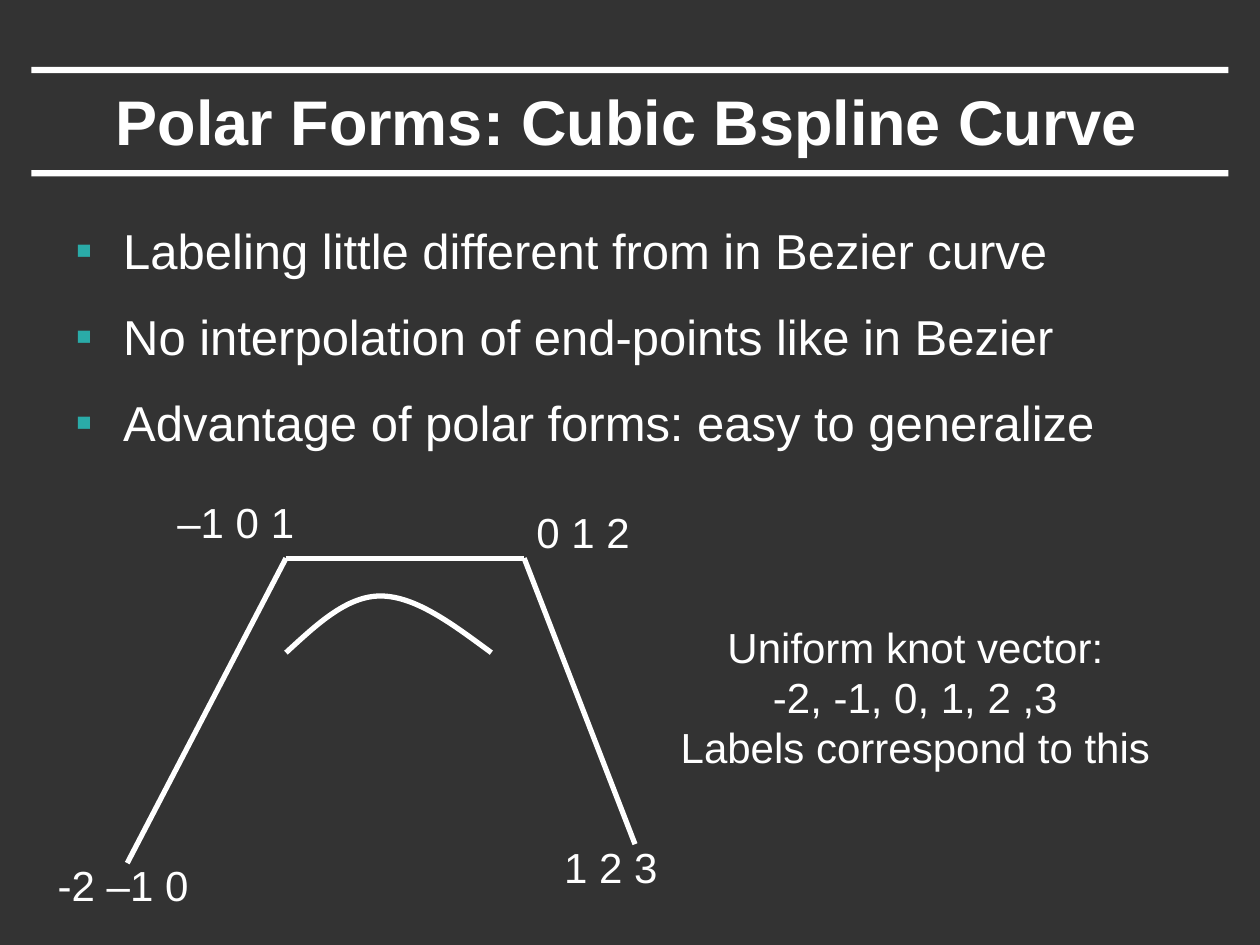
from lxml import etree
from pptx import Presentation
from pptx import util as u
from pptx.dml.color import RGBColor
from pptx.enum import shapes, text
from pptx.oxml.ns import qn

Inches = u.Inches
COLORS = {"back": "333333", "ink": "FFFFFF", "bullet": "2AABA8"}
INK = RGBColor.from_string(COLORS["ink"])


def write(shape, lines, size, align, bold=False):
    frame = shape.text_frame
    frame.text = "\n".join(lines)
    for para in frame.paragraphs:
        para.alignment = align
        for span in para.runs:
            span.font.name = "Arial"
            span.font.size = u.Pt(size)
            span.font.bold = bold
            span.font.color.rgb = INK
    return frame


def draw_line(shape):
    shape.line.color.rgb = INK
    shape.line.width = u.Pt(3)
    etree.SubElement(shape._element.spPr, qn("a:effectLst"))


deck = Presentation()
deck.slide_width, deck.slide_height = Inches(10), Inches(7.5)
page = deck.slides.add_slide(deck.slide_layouts[5])
page.background.fill.solid()
page.background.fill.fore_color.rgb = RGBColor.from_string(COLORS["back"])

for top in (0.53, 1.35):
    bar = page.shapes.add_shape(shapes.MSO_SHAPE.RECTANGLE, Inches(0.25), Inches(top), Inches(9.5), Inches(0.05))
    bar.shadow.inherit = False
    bar.fill.solid()
    bar.fill.fore_color.rgb = INK
    bar.line.fill.background()

title = page.shapes.title
title.left, title.top, title.width, title.height = Inches(0.74), Inches(0.58), Inches(8.47), Inches(0.75)
frame = write(title, ["Polar Forms: Cubic Bspline Curve"], 36, text.PP_ALIGN.CENTER, bold=True)
frame.vertical_anchor = text.MSO_ANCHOR.MIDDLE
frame.auto_size = text.MSO_AUTO_SIZE.NONE

diagram = page.shapes.add_group_shape()
control_points = [(1.01, 6.85), (2.27, 4.43), (4.16, 4.43), (5.04, 6.7)]
for start, end in zip(control_points, control_points[1:]):
    edge = diagram.shapes.add_connector(shapes.MSO_CONNECTOR.STRAIGHT, *map(Inches, start + end))
    draw_line(edge)

curve_points = [(2.51, 4.96), (2.75, 4.73), (3.02, 4.73), (3.3, 4.73), (3.6, 4.96), (3.9, 5.18)]
builder = diagram.shapes.build_freeform(Inches(2.27), Inches(5.18))
builder.add_line_segments([(Inches(x), Inches(y)) for x, y in curve_points], close=False)
curve = builder.convert_to_shape()
curve.fill.background()
draw_line(curve)
segments = curve._element.xpath(".//a:lnTo")
for first in range(0, len(segments), 3):
    segments[first].tag = qn("a:cubicBezTo")
    for segment in segments[first + 1:first + 3]:
        segments[first].append(segment[0])
        segment.getparent().remove(segment)

labels = [
    ("-2 –1 0", 0.36, 6.77, 1.24),
    ("–1 0 1", 1.31, 3.89, 1.13),
    ("0 1 2", 4.16, 3.97, 1.16),
    ("1 2 3", 4.38, 6.63, 0.94),
]
for label, left, top, width in labels:
    box = diagram.shapes.add_textbox(Inches(left), Inches(top), Inches(width), Inches(0.5))
    frame = write(box, [label], 24, text.PP_ALIGN.LEFT)
    frame.word_wrap = label == "0 1 2"

points = page.shapes.add_textbox(Inches(0.5), Inches(1.67), Inches(9), Inches(5.5))
frame = write(points, [
    "Labeling little different from in Bezier curve",
    "No interpolation of end-points like in Bezier",
    "Advantage of polar forms: easy to generalize",
], 28, text.PP_ALIGN.LEFT)
frame.word_wrap = True
frame.margin_top = Inches(0.08)
for para in frame.paragraphs:
    para.space_after = u.Pt(15.5)
    props = para._p.get_or_add_pPr()
    props.set("marL", str(Inches(0.38)))
    props.set("indent", str(Inches(-0.38)))
    color = etree.SubElement(props, qn("a:buClr"))
    etree.SubElement(color, qn("a:srgbClr"), val=COLORS["bullet"])
    etree.SubElement(props, qn("a:buFont"), typeface="Arial")
    etree.SubElement(props, qn("a:buChar"), char="▪")

knots = page.shapes.add_textbox(Inches(5.3), Inches(4.88), Inches(3.93), Inches(1.3))
frame = write(knots, ["Uniform knot vector:", "-2, -1, 0, 1, 2 ,3", "Labels correspond to this"], 24, text.PP_ALIGN.CENTER)
frame.word_wrap = False

deck.save("out.pptx")
